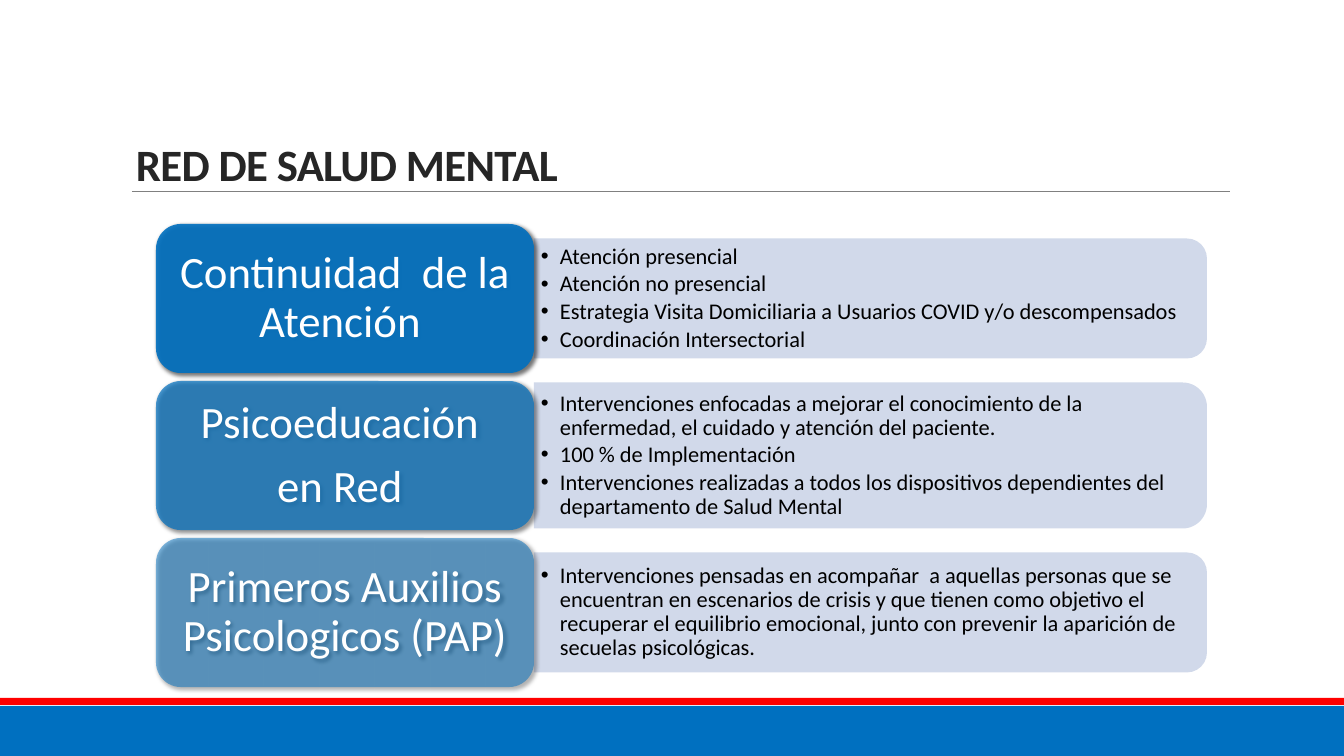
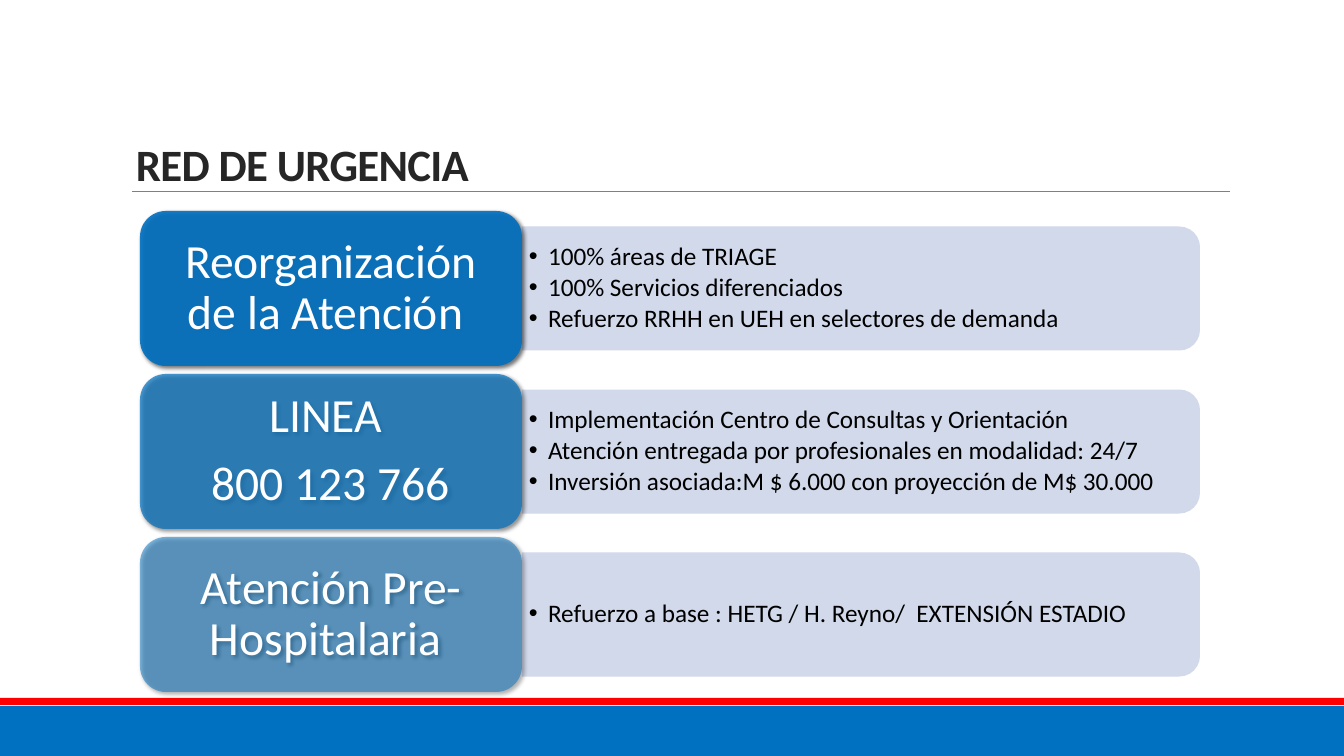
from lxml.etree import SubElement as Sub
from pptx import Presentation
from pptx.dml.color import RGBColor
from pptx.enum.shapes import MSO_CONNECTOR as Link, MSO_SHAPE as Kind
from pptx.enum.text import MSO_ANCHOR as Anchor, PP_ALIGN as Align
from pptx.oxml.ns import qn
from pptx.util import Pt

PX = 914400 / 100.8
WIDE, HIGH = 1344, 756
BLUE, RED, GREY, PALE = "0070C0", "FF0000", "808080", "CCD5E8"
DARK, BLACK, WHITE = "262626", "000000", "FFFFFF"
FONT = "Calibri"
FADES = [90, 70, 50]

SLIDES = [
    {
        "title": "RED DE SALUD MENTAL",
        "left": 156, "top": 224, "step": 157,
        "head": (378, 149), "panel": 673, "sizes": (32, 16),
        "rows": [
            (120, ["Continuidad  de la Atención "],
             ["Atención presencial",
              "Atención no presencial",
              "Estrategia Visita Domiciliaria a Usuarios COVID y/o descompensados",
              "Coordinación Intersectorial"]),
            (146, ["Psicoeducación ", "en Red "],
             ["Intervenciones enfocadas a mejorar el conocimiento de la "
              "enfermedad, el cuidado y atención del paciente.",
              "100 % de Implementación",
              "Intervenciones realizadas a todos los dispositivos dependientes "
              "del departamento de Salud Mental"]),
            (120, ["Primeros Auxilios Psicologicos (PAP)"],
             ["Intervenciones pensadas en acompañar  a aquellas personas que se "
              "encuentran en escenarios de crisis y que tienen como objetivo el "
              "recuperar el equilibrio emocional, junto con prevenir la "
              "aparición de secuelas psicológicas."]),
        ],
    },
    {
        "title": "RED DE URGENCIA",
        "left": 140, "top": 211, "step": 163,
        "head": (382, 155), "panel": 678, "sizes": (34, 18),
        "rows": [
            (124, ["Reorganización de la Atención "],
             ["100% áreas de TRIAGE",
              "100% Servicios diferenciados",
              "Refuerzo RRHH en UEH en selectores de demanda"]),
            (124, ["LINEA ", " 800 123 766 "],
             ["Implementación Centro de Consultas y Orientación",
              "Atención entregada por profesionales en modalidad: 24/7",
              "Inversión asociada:M $ 6.000 con proyección de M$ 30.000"]),
            (124, ["Atención Pre-Hospitalaria "],
             ["Refuerzo a base : HETG / H. Reyno/  EXTENSIÓN ESTADIO"]),
        ],
    },
]


def px(*nums):
    return [round(n * PX) for n in nums]


def rgb(code):
    return RGBColor.from_string(code)


def shape(slide, kind, box, fill, fade=100, shade=False):
    item = slide.shapes.add_shape(kind, *px(*box))
    item.shadow.inherit = False
    item.fill.solid()
    item.fill.fore_color.rgb = rgb(fill)
    item.line.fill.background()
    props = item.element.spPr
    if fade < 100:
        Sub(props.find(".//" + qn("a:srgbClr")), qn("a:alpha"), val=str(fade * 1000))
    if shade:
        cast = Sub(props.find(qn("a:effectLst")), qn("a:outerShdw"),
                   blurRad=str(Pt(3)), dist=str(Pt(2)), dir="2700000", rotWithShape="0")
        Sub(Sub(cast, qn("a:srgbClr"), val=BLACK), qn("a:alpha"), val="60000")
    return item


def write(item, lines, size, color, bold=False, align=Align.LEFT, anchor=Anchor.MIDDLE,
          pads=(7, 3), lead=0.9, after=0, track=None, bullet=False):
    """Fill a shape with one paragraph per line; after is a share of the text size."""
    frame = item.text_frame
    frame.word_wrap = True
    frame.vertical_anchor = anchor
    frame.margin_left = frame.margin_right = px(pads[0])[0]
    frame.margin_top = frame.margin_bottom = px(pads[1])[0]
    for i, line in enumerate(lines):
        para = frame.add_paragraph() if i else frame.paragraphs[0]
        para.alignment, para.line_spacing = align, lead
        para.space_after = Pt(round(size * after, 1))
        run = para.add_run()
        run.text = line
        font = run.font
        font.name, font.size, font.bold = FONT, Pt(size), bold
        font.color.rgb = rgb(color)
        if track:
            run._r.get_or_add_rPr().set("spc", str(track))
        if bullet:
            props = para._p.get_or_add_pPr()
            dent = px(19)[0]
            props.set("marL", str(dent))
            props.set("indent", str(-dent))
            Sub(props, qn("a:buFont"), typeface="Arial")
            Sub(props, qn("a:buChar"), char="•")


deck = Presentation()
deck.slide_width, deck.slide_height = px(WIDE, HIGH)

for data in SLIDES:
    slide = deck.slides.add_slide(deck.slide_layouts[6])

    shape(slide, Kind.RECTANGLE, (0, 706, WIDE, 50), BLUE)
    shape(slide, Kind.RECTANGLE, (0, 698, WIDE, 7), RED)
    rule = slide.shapes.add_connector(Link.STRAIGHT, *px(132, 191, 1230, 191))
    rule.line.color.rgb = rgb(GREY)
    rule.line.width = Pt(0.5)
    Sub(rule._element.spPr, qn("a:effectLst"))
    title = slide.shapes.add_textbox(*px(126, 69, 818, 127))
    write(title, [data["title"]], 32, DARK, bold=True, anchor=Anchor.BOTTOM,
          pads=(10, 5), lead=0.85, track=-50)

    wide, high = data["head"]
    long = data["panel"]
    big, small = data["sizes"]
    left = data["left"]
    edge = left + wide
    for i, (tall, head, items) in enumerate(data["rows"]):
        top = data["top"] + i * data["step"]
        mid = top + high / 2
        # The panel is a standing shape turned a quarter, so its round end faces right.
        panel = shape(slide, Kind.ROUND_2_SAME_RECTANGLE,
                      (edge + (long - tall) / 2, mid - long / 2, tall, long), PALE, 90)
        panel.rotation = 90
        body = slide.shapes.add_textbox(*px(edge, mid - tall / 2 + 6, long - 6, tall - 12))
        write(body, items, small, BLACK, after=0.15, bullet=True)
        card = shape(slide, Kind.ROUNDED_RECTANGLE, (left, top, wide, high),
                     BLUE, FADES[i], shade=True)
        write(card, head, big, WHITE, align=Align.CENTER, pads=(13, 7), after=0.35)

deck.save("out.pptx")
